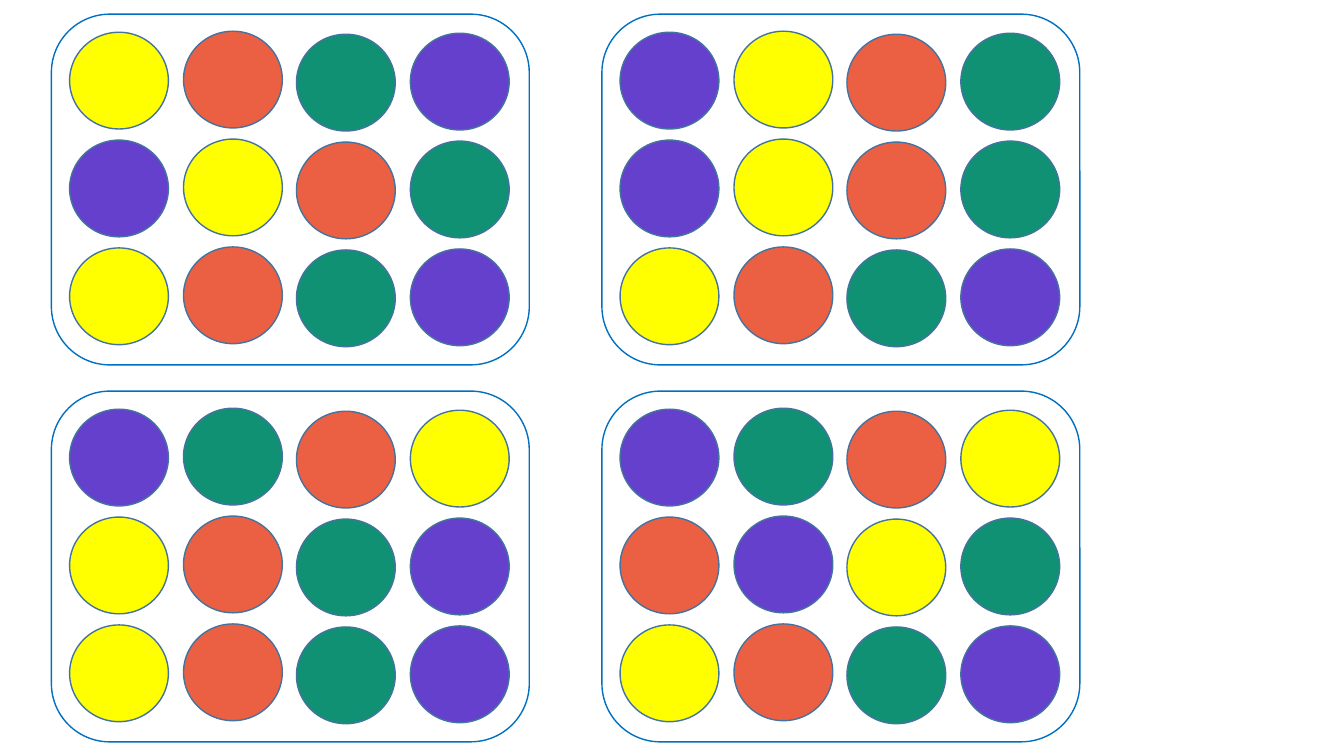
from pptx import Presentation
from pptx.dml.color import RGBColor
from pptx.enum.shapes import MSO_SHAPE
from pptx.util import Pt

PX = 9144  # EMU per px, 100 px to the inch

YELLOW, ORANGE, GREEN, PURPLE = "FFFF00", "EB5F43", "119173", "6540CC"
FILLS = {"Y": YELLOW, "O": ORANGE, "G": GREEN, "P": PURPLE}
CIRCLE_LINE, CARD_LINE = "43739E", "0070C0"

CARD_WIDTH, CARD_HEIGHT = 474, 348
CIRCLE_WIDTH, CIRCLE_HEIGHT = 98, 96
COLUMNS = [(18, 18), (131, 17), (243, 20), (356, 19)]  # left and top within a card
ROW_STEP = 107

# Left, top and the circle colours of each card, row by row
CARDS = [
    (51, 14, ["YOGP", "PYOG", "YOGP"]),
    (51, 388, ["PGOY", "YOGP", "YOGP"]),
    (597, 388, ["PGOY", "OPYG", "YOGP"]),
    (597, 14, ["PYOG", "PYOG", "YOGP"]),
]


def color(value):
    return RGBColor.from_string(value)


def add_outline(group, kind, left, top, width, height, line):
    shape = group.shapes.add_shape(kind, left * PX, top * PX, width * PX, height * PX)
    shape.shadow.inherit = False
    shape.fill.background()
    shape.line.color.rgb = color(line)
    shape.line.width = Pt(1)
    return shape


deck = Presentation()
deck.slide_width, deck.slide_height = 1333 * PX, 750 * PX
page = deck.slides.add_slide(deck.slide_layouts[6])

for card_left, card_top, rows in CARDS:
    card = page.shapes.add_group_shape()

    # Grid of coloured circles
    for row, letters in enumerate(rows):
        for (left, top), letter in zip(COLUMNS, letters):
            circle = add_outline(card, MSO_SHAPE.OVAL, card_left + left,
                                 card_top + top + row * ROW_STEP,
                                 CIRCLE_WIDTH, CIRCLE_HEIGHT, CIRCLE_LINE)
            circle.fill.solid()
            circle.fill.fore_color.rgb = color(FILLS[letter])

    # Rounded frame around the grid
    add_outline(card, MSO_SHAPE.ROUNDED_RECTANGLE, card_left, card_top,
                CARD_WIDTH, CARD_HEIGHT, CARD_LINE)

deck.save("out.pptx")
